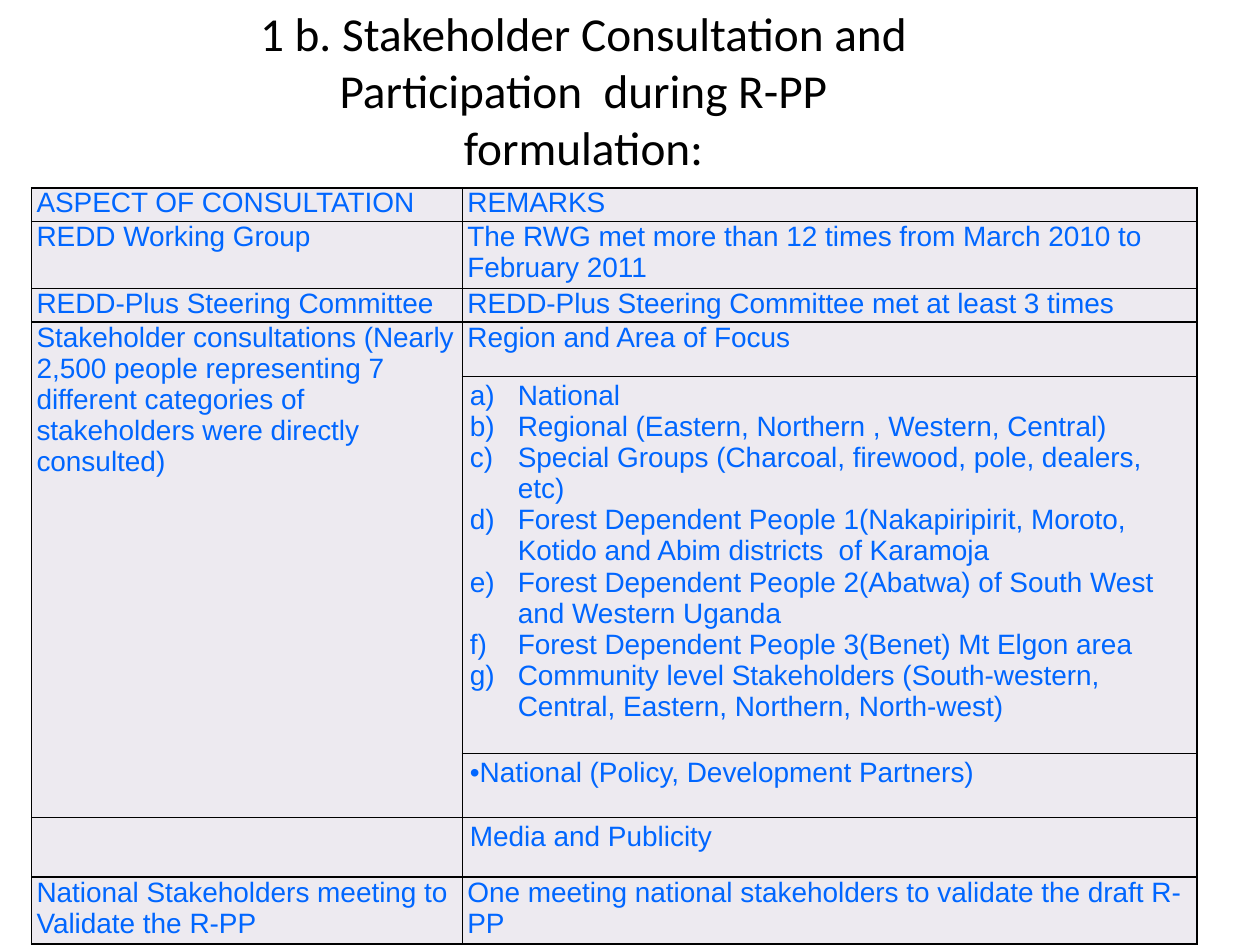
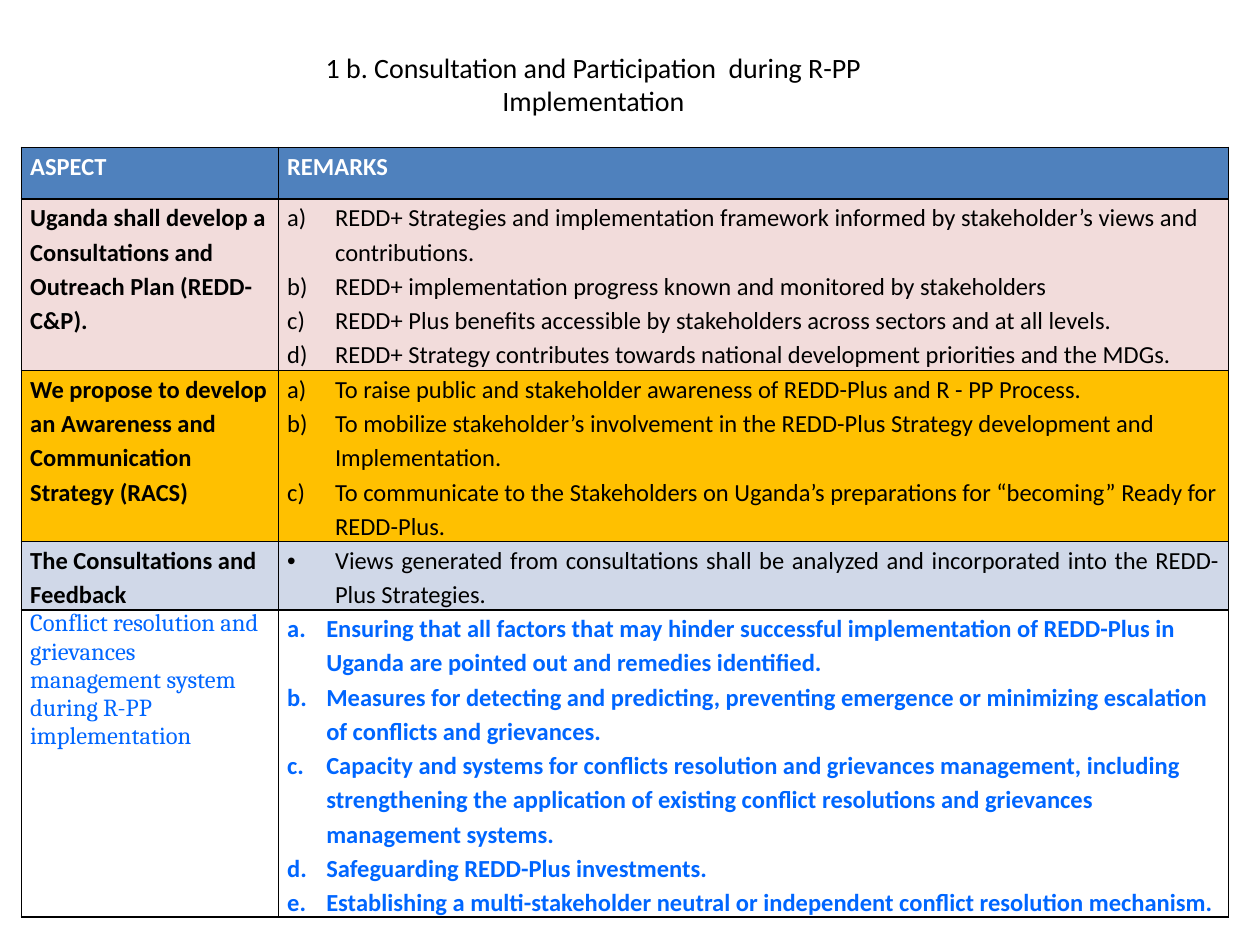
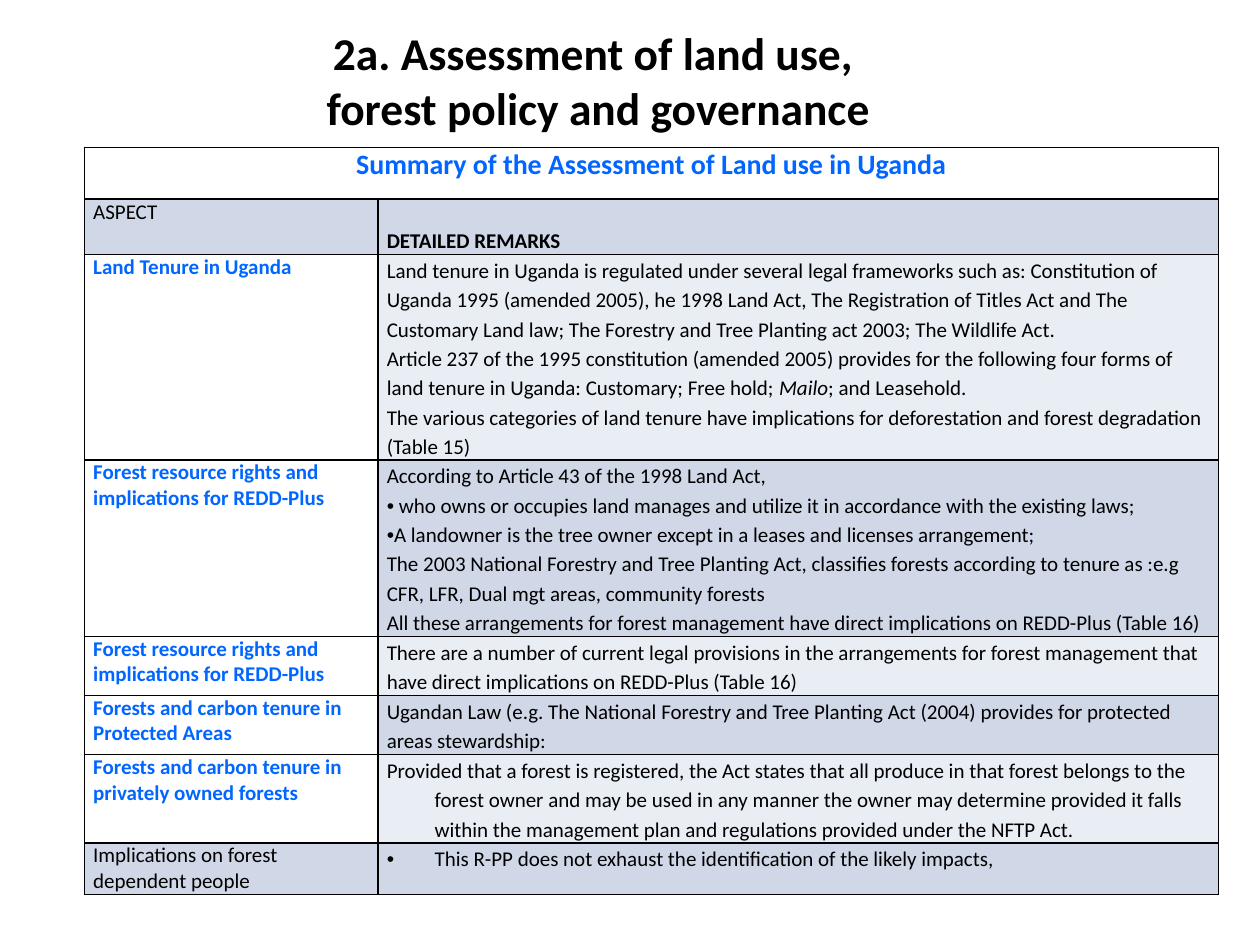
from lxml import etree
from pptx import Presentation
from pptx.dml.color import RGBColor
from pptx.enum.text import MSO_ANCHOR, PP_ALIGN
from pptx.oxml.ns import qn
from pptx.util import Inches, Pt

BLACK, WHITE, BLUE = "000000", "FFFFFF", "0066FF"
LILAC, HEADER_BLUE, ROSE, AMBER = "EDEAF0", "4F81BD", "F2DCDB", "FFC000"
BAND_DARK, BAND_LIGHT = "D0D8E8", "E9EDF4"


def rgb(value):
    return RGBColor.from_string(value)


def write_cell(cell, lines, fill, color=BLACK, size=14, bold=False, font="Calibri",
               numbering=None, hang=0, spacing=1.0, margins=(0.07, 0), align=None):
    cell.margin_left = cell.margin_right = Inches(margins[0])
    cell.margin_top = cell.margin_bottom = Inches(margins[1])
    properties = cell._tc.get_or_add_tcPr()
    for side in ("a:lnL", "a:lnR", "a:lnT", "a:lnB"):
        border = etree.SubElement(properties, qn(side), w=str(Pt(1)))
        border_fill = etree.SubElement(border, qn("a:solidFill"))
        etree.SubElement(border_fill, qn("a:srgbClr"), val=BLACK)
    cell.fill.solid()
    cell.fill.fore_color.rgb = rgb(fill)
    for index, line in enumerate(lines):
        frame = cell.text_frame
        paragraph = frame.add_paragraph() if index else frame.paragraphs[0]
        paragraph.line_spacing = spacing
        paragraph.alignment = align
        layout = paragraph._p.get_or_add_pPr()
        layout.set("marL", str(Inches(hang)))
        layout.set("indent", str(-Inches(hang)))
        if numbering:
            etree.SubElement(layout, qn("a:buFont"), typeface="+mj-lt")
            etree.SubElement(layout, qn("a:buAutoNum"), type=numbering)
        elif line.startswith("•"):
            etree.SubElement(layout, qn("a:buFont"), typeface="Arial")
            etree.SubElement(layout, qn("a:buChar"), char="•")
            line = line[1:]
        for part_index, part in enumerate(line.split("_")):
            run = paragraph.add_run()
            run.text = part
            run.font.name = font
            run.font.size = Pt(size)
            run.font.bold = bold
            run.font.italic = part_index % 2 == 1
            run.font.color.rgb = rgb(color)


prs = Presentation()
prs.slide_width, prs.slide_height = Inches(10), Inches(7.5)

pages = [
    dict(title="1 b. Stakeholder Consultation and Participation  during R-PP formulation:",
         title_box=(1.67, 0, 5.92, 1.42), title_size=27, bold=False, inset=0.05,
         corner=(0.25, 1.49), columns=(3.42, 5.83),
         rows=(0.25, 0.49, 0.25, 0.43, 2.78, 0.51, 0.47, 0.49)),
    dict(title="1 b. Consultation and Participation  during R-PP Implementation",
         title_box=(1.75, 0, 5.92, 1.33), title_size=16, bold=False, inset=0.05,
         corner=(0.17, 1.17), columns=(2.04, 7.54),
         rows=(0.41, 1.36, 1.36, 0.54, 2.44)),
    dict(title="2a. Assessment of land use, \vforest policy and governance",
         title_box=(0.25, 0, 9, 1.5), title_size=26, bold=True, inset=0.28,
         corner=(0.67, 1.17), columns=(2.33, 6.67),
         rows=(0.41, 0.44, 1.63, 1.4, 0.47, 0.47, 0.7, 0.41)),
]

tables = []
for page in pages:
    slide = prs.slides.add_slide(prs.slide_layouts[6])
    heading = slide.shapes.add_textbox(*map(Inches, page["title_box"])).text_frame
    heading.word_wrap = True
    heading.vertical_anchor = MSO_ANCHOR.MIDDLE
    heading.margin_bottom = Inches(page["inset"])
    title = heading.paragraphs[0]
    title.text = page["title"]
    title.alignment = PP_ALIGN.CENTER
    for run in title.runs:
        run.font.name = "Calibri"
        run.font.size = Pt(page["title_size"])
        run.font.bold = page["bold"]
        run.font.color.rgb = rgb(BLACK)
    left, top = page["corner"]
    table = slide.shapes.add_table(
        len(page["rows"]), 2, Inches(left), Inches(top),
        Inches(sum(page["columns"])), Inches(sum(page["rows"]))).table
    table.first_row = table.horz_banding = False
    for column, width in zip(table.columns, page["columns"]):
        column.width = Inches(width)
    for row, height in zip(table.rows, page["rows"]):
        row.height = Inches(height)
    tables.append(table)

formulation, implementation, land_use = tables

consulted_groups = [
    "National",
    "Regional (Eastern, Northern , Western, Central)",
    "Special Groups (Charcoal, firewood, pole, dealers, etc)",
    "Forest Dependent People 1(Nakapiripirit, Moroto, Kotido and Abim districts  of Karamoja",
    "Forest Dependent People 2(Abatwa) of South West and Western Uganda",
    "Forest Dependent People 3(Benet) Mt Elgon area",
    "Community level Stakeholders (South-western, Central, Eastern, Northern, North-west)",
]
consultations = [
    ("ASPECT OF CONSULTATION", ["REMARKS"]),
    ("REDD Working Group",
     ["The RWG met more than 12 times from March 2010 to February 2011"]),
    ("REDD-Plus Steering Committee", ["REDD-Plus Steering Committee met at least 3 times"]),
    ("Stakeholder consultations (Nearly 2,500 people representing 7 different categories "
     "of stakeholders were directly consulted)", ["Region and Area of Focus"]),
    ("", consulted_groups),
    ("", ["•National (Policy, Development Partners)"]),
    ("", ["Media and Publicity"]),
    ("National Stakeholders meeting to Validate the R-PP",
     ["One meeting national stakeholders to validate the draft R-PP"]),
]
consultation_style = dict(fill=LILAC, color=BLUE, size=16, font="Arial")
for index, (aspect, remarks) in enumerate(consultations):
    listed = remarks is consulted_groups
    write_cell(formulation.cell(index, 0), [aspect], margins=(0.04, 0), **consultation_style)
    write_cell(formulation.cell(index, 1), remarks,
               margins=(0.06, 0.03) if index in (4, 5, 6) else (0.04, 0),
               numbering="alphaLcParenR" if listed else None,
               hang=0.38 if listed else 0, **consultation_style)
formulation.cell(3, 0).merge(formulation.cell(5, 0))

lettered = dict(numbering="alphaLcParenR", hang=0.38, spacing=1.15)
aspect_style = dict(bold=True, spacing=1.15)
header_style = dict(color=WHITE, **aspect_style)
plans = [
    (HEADER_BLUE, "ASPECT", header_style, ["REMARKS"], header_style),
    (ROSE, "Uganda shall develop a Consultations and Outreach Plan (REDD-C&P).", aspect_style, [
        "REDD+ Strategies and implementation framework informed by stakeholder’s views and "
        "contributions.",
        "REDD+ implementation progress known and monitored by stakeholders",
        "REDD+ Plus benefits accessible by stakeholders across sectors and at all levels.",
        "REDD+ Strategy contributes towards national development priorities and the MDGs.",
    ], lettered),
    (AMBER, "We propose to develop an Awareness and Communication Strategy (RACS)", aspect_style, [
        "To raise public and stakeholder awareness of REDD-Plus and R - PP Process.",
        "To mobilize stakeholder’s involvement in the REDD-Plus Strategy development and "
        "Implementation.",
        "To communicate to the Stakeholders on Uganda’s preparations for “becoming” Ready for "
        "REDD-Plus.",
    ], lettered),
    (BAND_DARK, "The Consultations and Feedback", aspect_style, [
        "•Views generated from consultations shall be analyzed and incorporated into the "
        "REDD-Plus Strategies.",
    ], dict(hang=0.38, spacing=1.15, align=PP_ALIGN.JUSTIFY)),
    (WHITE, "Conflict resolution and grievances management system during R-PP implementation",
     dict(font="Cambria", color=BLUE), [
        "Ensuring that all factors that may hinder successful implementation of REDD-Plus in "
        "Uganda are pointed out and remedies identified.",
        "Measures for detecting and predicting, preventing emergence or minimizing escalation "
        "of conflicts and grievances.",
        "Capacity and systems for conflicts resolution and grievances management, including "
        "strengthening the application of existing conflict resolutions and grievances "
        "management systems.",
        "Safeguarding REDD-Plus investments.",
        "Establishing a multi-stakeholder neutral or independent conflict resolution mechanism.",
    ], dict(numbering="alphaLcPeriod", hang=0.31, spacing=1.15, bold=True, color=BLUE)),
]
for index, (fill, aspect, left_style, remarks, right_style) in enumerate(plans):
    write_cell(implementation.cell(index, 0), [aspect], fill, **left_style)
    write_cell(implementation.cell(index, 1), remarks, fill, **right_style)

write_cell(land_use.cell(0, 0), ["Summary of the Assessment of Land use in Uganda"], WHITE,
           BLUE, 16, True, align=PP_ALIGN.CENTER)
write_cell(land_use.cell(0, 1), [], WHITE)
land_use.cell(0, 0).merge(land_use.cell(0, 1))
assessments = [
    ("ASPECT", ["DETAILED REMARKS"]),
    ("Land Tenure in Uganda", [
        "Land tenure in Uganda is regulated under several legal frameworks such as: Constitution "
        "of Uganda 1995 (amended 2005), he 1998 Land Act, The Registration of Titles Act and The "
        "Customary Land law; The Forestry and Tree Planting act 2003; The Wildlife Act.",
        "Article 237 of the 1995 constitution (amended 2005) provides for the following four "
        "forms of land tenure in Uganda: Customary; Free hold; _Mailo_; and Leasehold.",
        "The various categories of land tenure have implications for deforestation and forest "
        "degradation (Table 15)",
    ]),
    ("Forest resource rights and implications for REDD-Plus", [
        "According to Article 43 of the 1998 Land Act,",
        "• who owns or occupies land manages and utilize it in accordance with the existing laws;",
        "•A landowner is the tree owner except in a leases and licenses arrangement;",
        "The 2003 National Forestry and Tree Planting Act, classifies forests according to "
        "tenure as :e.g CFR, LFR, Dual mgt areas, community forests",
        "All these arrangements for forest management have direct implications on REDD-Plus "
        "(Table 16)",
    ]),
    ("Forest resource rights and implications for REDD-Plus", [
        "There are a number of current legal provisions in the arrangements for forest "
        "management that have direct implications on REDD-Plus (Table 16)",
    ]),
    ("Forests and carbon tenure in Protected Areas", [
        "Ugandan Law (e.g. The National Forestry and Tree Planting Act (2004) provides for "
        "protected areas stewardship:",
    ]),
    ("Forests and carbon tenure in privately owned forests", [
        "Provided that a forest is registered, the Act states that all produce in that forest "
        "belongs to the forest owner and may be used in any manner the owner may determine "
        "provided it falls within the management plan and regulations provided under the NFTP "
        "Act.",
    ]),
    ("Implications on forest dependent people", [
        "•This R-PP does not exhaust the identification of the likely impacts,",
    ]),
]
for index, (aspect, remarks) in enumerate(assessments, start=1):
    topic = 1 < index < len(assessments)
    write_cell(land_use.cell(index, 0), [aspect], WHITE if topic else BAND_DARK,
               BLUE if topic else BLACK, 12, topic)
    write_cell(land_use.cell(index, 1), remarks,
               BAND_DARK if index % 2 or index == len(assessments) else BAND_LIGHT,
               size=12, bold=index == 1, hang=0.38 if index >= 6 else 0, spacing=1.15)
land_use.cell(1, 1).vertical_anchor = MSO_ANCHOR.BOTTOM

prs.save("out.pptx")
